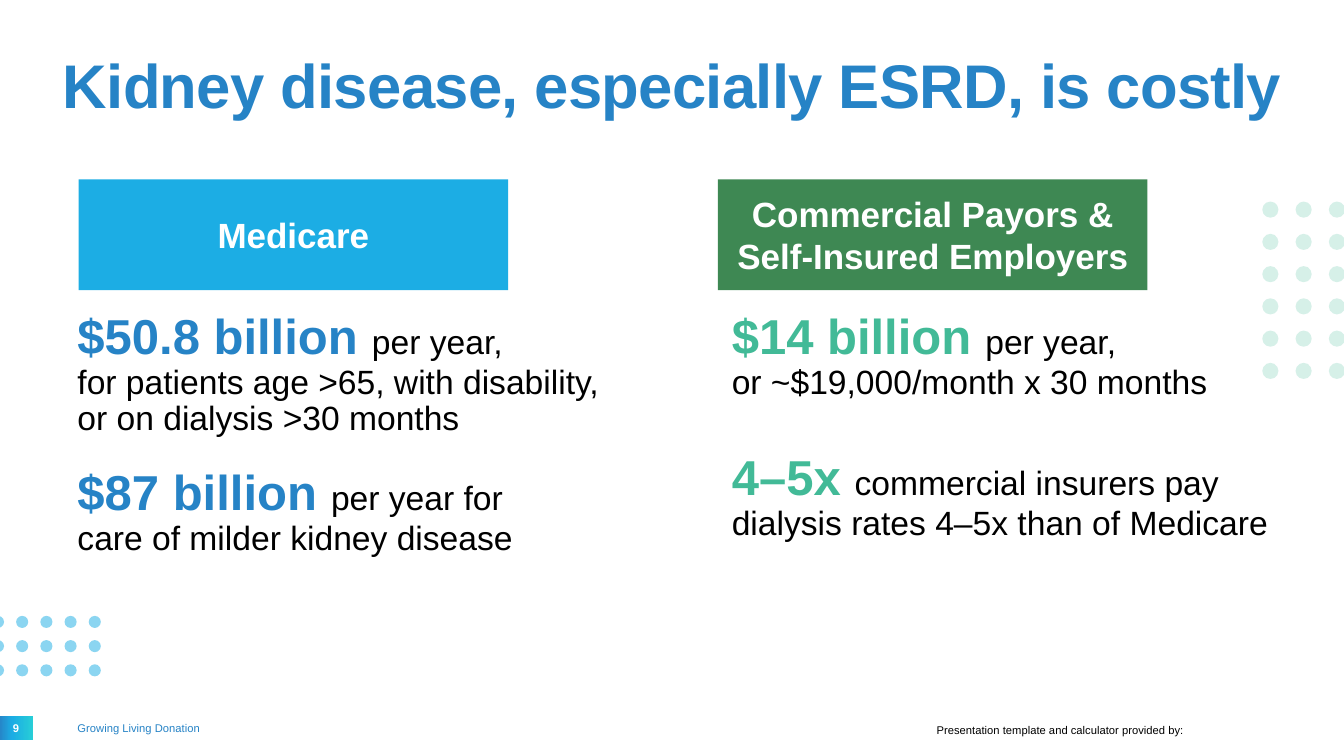
"""Build the slide on the cost of kidney disease to Medicare and commercial payors."""
from copy import deepcopy
from dataclasses import dataclass
from itertools import product

from lxml.etree import SubElement
from pptx import Presentation
from pptx.dml.color import RGBColor
from pptx.enum.shapes import MSO_SHAPE
from pptx.enum.text import MSO_ANCHOR, MSO_AUTO_SIZE, PP_ALIGN
from pptx.oxml.ns import qn
from pptx.util import Inches, Pt


@dataclass(frozen=True)
class Theme:
    """Colours, font and type sizes of the slide."""
    font: str = "Arial"
    blue: str = "2683C6"
    sky: str = "1CADE4"
    aqua: str = "27CED7"
    mint: str = "42BA97"
    green: str = "3E8853"
    black: str = "000000"
    white: str = "FFFFFF"
    title: float = 44
    figure: float = 35
    header: float = 25
    body: float = 24
    footer: float = 8


class CostSlide:
    """Holds the theme and the page, and draws each kind of element."""

    def __init__(self, page, theme):
        """Keep the page and its theme."""
        self.page = page
        self.theme = theme

    def style(self, font, size, color, bold=False):
        """Format a paragraph or run font."""
        font.name = self.theme.font
        font.size = Pt(size)
        font.bold = bold
        font.color.rgb = RGBColor.from_string(color)

    def label(self, frame, text, size, color, bold=False, align=PP_ALIGN.CENTER):
        """Put one centred-in-height paragraph into a text frame."""
        frame.word_wrap = True
        frame.vertical_anchor = MSO_ANCHOR.MIDDLE
        para = frame.paragraphs[0]
        para.text = text
        para.alignment = align
        self.style(para.font, size, color, bold)
        return para

    def title(self, text):
        """Place and format the title placeholder."""
        box = self.page.shapes.title
        box.left, box.top = Inches(0), Inches(0)
        box.width, box.height = Inches(13.33), Inches(1.76)
        box.text_frame.auto_size = MSO_AUTO_SIZE.NONE
        para = self.label(box.text_frame, text, self.theme.title, self.theme.blue, True)
        para.line_spacing = 0.9
        para.runs[0].font._element.set("spc", "-50")

    def shape(self, kind, left, top, width, height, color):
        """Draw a flat shape without outline or shadow."""
        box = self.page.shapes.add_shape(
            kind, Inches(left), Inches(top), Inches(width), Inches(height))
        box.shadow.inherit = False
        box.line.fill.background()
        box.fill.solid()
        box.fill.fore_color.rgb = RGBColor.from_string(color)
        return box

    def header(self, left, text, color):
        """Draw a coloured column header."""
        box = self.shape(MSO_SHAPE.RECTANGLE, left, 1.78, 4.26, 1.1, color)
        self.label(box.text_frame, text, self.theme.header, self.theme.white, True)

    def facts(self, left, color, before, after, entries):
        """Set a column of facts, each opened by a large figure."""
        box = self.page.shapes.add_textbox(
            Inches(left), Inches(3.05), Inches(5.67), Inches(3.76))
        frame = box.text_frame
        frame.word_wrap = True
        for index, (figure, lines) in enumerate(entries):
            para = frame.paragraphs[0] if index == 0 else frame.add_paragraph()
            para.line_spacing = 0.9
            para.space_before, para.space_after = Pt(before), Pt(after)
            span = para.add_run()
            span.text = figure + " "
            self.style(span.font, self.theme.figure, color, True)
            for number, line in enumerate(lines):
                if number:
                    para.add_line_break()
                span = para.add_run()
                span.text = line
                self.style(span.font, self.theme.body, self.theme.black)

    def dots(self, left, top, columns, rows, gap_x, gap_y, size, color, opacity):
        """Draw a grid of translucent dots."""
        for column, row in product(range(columns), range(rows)):
            dot = self.shape(MSO_SHAPE.OVAL, left + column * gap_x,
                             top + row * gap_y, size, size, color)
            tint = dot._element.spPr.find(qn("a:solidFill"))[0]
            SubElement(tint, qn("a:alpha")).set("val", str(opacity * 1000))

    def footer(self, left, top, width, text, color, align):
        """Set a small line of footer text."""
        box = self.page.shapes.add_textbox(
            Inches(left), Inches(top), Inches(width), Inches(0.25))
        self.label(box.text_frame, text, self.theme.footer, color, align=align)

    def page_number(self, text):
        """Draw the gradient tab with the page number."""
        theme = self.theme
        tab = self.shape(MSO_SHAPE.RECTANGLE, -0.01, 7.1, 0.34, 0.24, theme.blue)
        tab.fill.gradient()
        tab.fill.gradient_angle = 0
        stops = tab._element.spPr.find(qn("a:gradFill")).find(qn("a:gsLst"))
        stops.insert(1, deepcopy(stops[0]))
        shades = ((0, theme.blue), (0.39, theme.sky), (1, theme.aqua))
        for stop, (position, color) in zip(tab.fill.gradient_stops, shades):
            stop.position = position
            stop.color.rgb = RGBColor.from_string(color)
        frame = tab.text_frame
        frame.margin_left = frame.margin_right = Inches(0)
        frame.margin_top = frame.margin_bottom = Inches(0)
        self.label(frame, text, theme.footer, theme.white, True)


def main():
    """Create the deck and save it."""
    deck = Presentation()
    deck.slide_width, deck.slide_height = Inches(13.33), Inches(7.5)
    theme = Theme()
    slide = CostSlide(deck.slides.add_slide(deck.slide_layouts[5]), theme)

    slide.title("Kidney disease, especially ESRD, is costly")
    slide.header(0.78, "Medicare", theme.sky)
    slide.header(7.12, "Commercial Payors & Self-Insured Employers", theme.green)
    slide.facts(0.67, theme.blue, 10, 12, [
        ("$50.8 billion", ["per year,",
                           "for patients age >65, with disability, or on dialysis >30 months"]),
        ("$87 billion", ["per year for", "care of milder kidney disease"]),
    ])
    slide.facts(7.16, theme.mint, 12, 25, [
        ("$14 billion", ["per year,", "or ~$19,000/month x 30 months"]),
        ("4–5x", ["commercial insurers pay dialysis rates 4–5x than of Medicare"]),
    ])
    slide.dots(-0.08, 6.11, 5, 3, 0.24, 0.24, 0.12, theme.sky, 51)
    slide.dots(12.52, 2, 3, 6, 0.33, 0.32, 0.16, theme.mint, 21)
    slide.page_number("9")
    slide.footer(0.67, 7.1, 8.47, "Growing Living Donation", theme.blue, PP_ALIGN.LEFT)
    slide.footer(9.14, 7.12, 2.7, "Presentation template and calculator provided by:",
                 theme.black, PP_ALIGN.RIGHT)
    deck.save("out.pptx")


if __name__ == "__main__":
    main()
